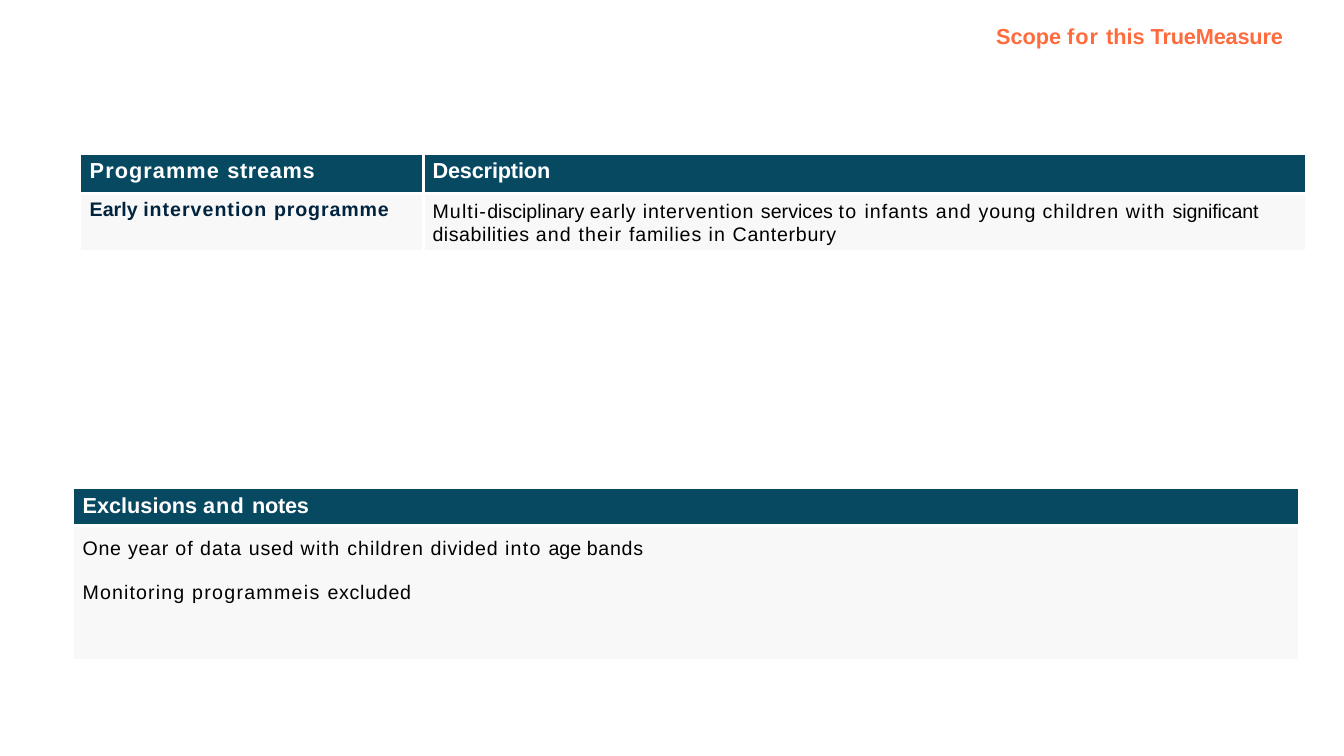
from pptx import Presentation
from pptx.dml.color import RGBColor
from pptx.enum.text import MSO_ANCHOR
from pptx.oxml.ns import qn
from pptx.util import Inches, Pt
from lxml import etree

TOP = MSO_ANCHOR.TOP
THEME = {
    "font": "Arial",
    "rule": "FFFFFF",
    "thin": 1,
    "thick": 2.25,
    "title": {"size": 15.5, "color": "FF6B3D", "bold": True},
    "head": {"size": 15.5, "color": "FFFFFF", "bold": True, "fill": "084962"},
    "name": {"size": 14, "color": "00233E", "bold": True, "fill": "F8F8F8"},
    "body": {"size": 14, "color": "000000", "bold": False, "fill": "F8F8F8"},
}

TITLE = [("Scope ", 0), ("for ", 0.7), ("this ", 0), ("TrueMeasure", -0.1)]
DETAIL = [
    ("Multi-", 0.8), ("disciplinary ", 0), ("early intervention ", 0.6),
    ("services ", 0), ("to ", 1), ("infants ", 0.7), ("and ", 0.8),
    ("young ", 0.6), ("children ", 0.7), ("with ", 0.9),
    ("significant ", -0.1), ("disabilities ", 0.4), ("and their ", 0.8),
    ("families ", 0.6), ("in ", 0.8), ("Canterbury", 0.5),
]
NOTES = [
    [("One year ", 0.5), ("of data ", 0.7), ("used ", 0.5), ("with ", 0.9),
     ("children ", 0.7), ("divided ", 0.6), ("into ", 0.9), ("age ", 0),
     ("bands", 0.5)],
    [("Monitoring ", 0.8), ("programmeis ", 0.9), ("excluded", 0.5)],
]
TABLES = [
    {
        "at": (0.8, 1.53), "cols": [3.4, 8.75], "rows": [0.39, 0.57],
        "cells": [
            [("head", 0.05, None, [[("Programme ", 0.8), ("streams", 0.5)]]),
             ("head", 0.05, None, [[("Description", -0.1)]])],
            [("name", 0.05, None, [[("Early ", 0), ("intervention ", 0.7),
                                    ("programme", 0.6)]]),
             ("body", 0.06, 16.5, [DETAIL])],
        ],
    },
    {
        "at": (0.73, 4.85), "cols": [12.15], "rows": [0.36, 1.34],
        "cells": [
            [("head", 0.05, None, [[("Exclusions ", 0), ("and ", 0.8),
                                    ("notes", -0.2)]])],
            [("body", 0.12, None, NOTES)],
        ],
    },
]


def write(frame, paras, look, pitch=None):
    frame.word_wrap = True
    for i, runs in enumerate(paras):
        para = frame.add_paragraph() if i else frame.paragraphs[0]
        if i:
            para.space_before = Pt(16.2)
        if pitch:
            para.line_spacing = Pt(pitch)
        for text, gap in runs:
            run = para.add_run()
            run.text = text
            font = run.font
            font.name = THEME["font"]
            font.size = Pt(look["size"])
            font.bold = look["bold"]
            font.color.rgb = RGBColor.from_string(look["color"])
            run._r.get_or_add_rPr().set("spc", str(round(gap * 100)))


def edge(cell, side, width):
    line = etree.SubElement(cell._tc.get_or_add_tcPr(), qn("a:ln" + side))
    line.set("w", str(Pt(width)))
    fill = etree.SubElement(line, qn("a:solidFill"))
    etree.SubElement(fill, qn("a:srgbClr")).set("val", THEME["rule"])


def grid(slide, data):
    cols, rows = data["cols"], data["rows"]
    left, top = data["at"]
    table = slide.shapes.add_table(
        len(rows), len(cols), Inches(left), Inches(top),
        Inches(sum(cols)), Inches(sum(rows))).table
    table.first_row = table.horz_banding = False
    for col, width in zip(table.columns, cols):
        col.width = Inches(width)
    for row, height in zip(table.rows, rows):
        row.height = Inches(height)
    for r, line in enumerate(data["cells"]):
        for c, (kind, inset, pitch, paras) in enumerate(line):
            cell, look = table.cell(r, c), THEME[kind]
            cell.margin_left, cell.margin_top = Inches(0.09), Inches(inset)
            cell.margin_right = cell.margin_bottom = 0
            cell.vertical_anchor = TOP
            inner = {"L": c > 0, "R": c < len(cols) - 1, "T": r > 0, "B": True}
            for side, wide in inner.items():
                edge(cell, side, THEME["thick" if wide else "thin"])
            cell.fill.solid()
            cell.fill.fore_color.rgb = RGBColor.from_string(look["fill"])
            write(cell.text_frame, paras, look, pitch)


def main():
    deck = Presentation()
    deck.slide_width, deck.slide_height = Inches(13.33), Inches(7.5)
    slide = deck.slides.add_slide(deck.slide_layouts[6])
    box = slide.shapes.add_textbox(
        Inches(9.87), Inches(0.23), Inches(3.1), Inches(0.27))
    frame = box.text_frame
    frame.margin_left = Inches(0.01)
    frame.margin_top = frame.margin_right = frame.margin_bottom = 0
    write(frame, [TITLE], THEME["title"])
    for data in TABLES:
        grid(slide, data)
    deck.save("out.pptx")


if __name__ == "__main__":
    main()
